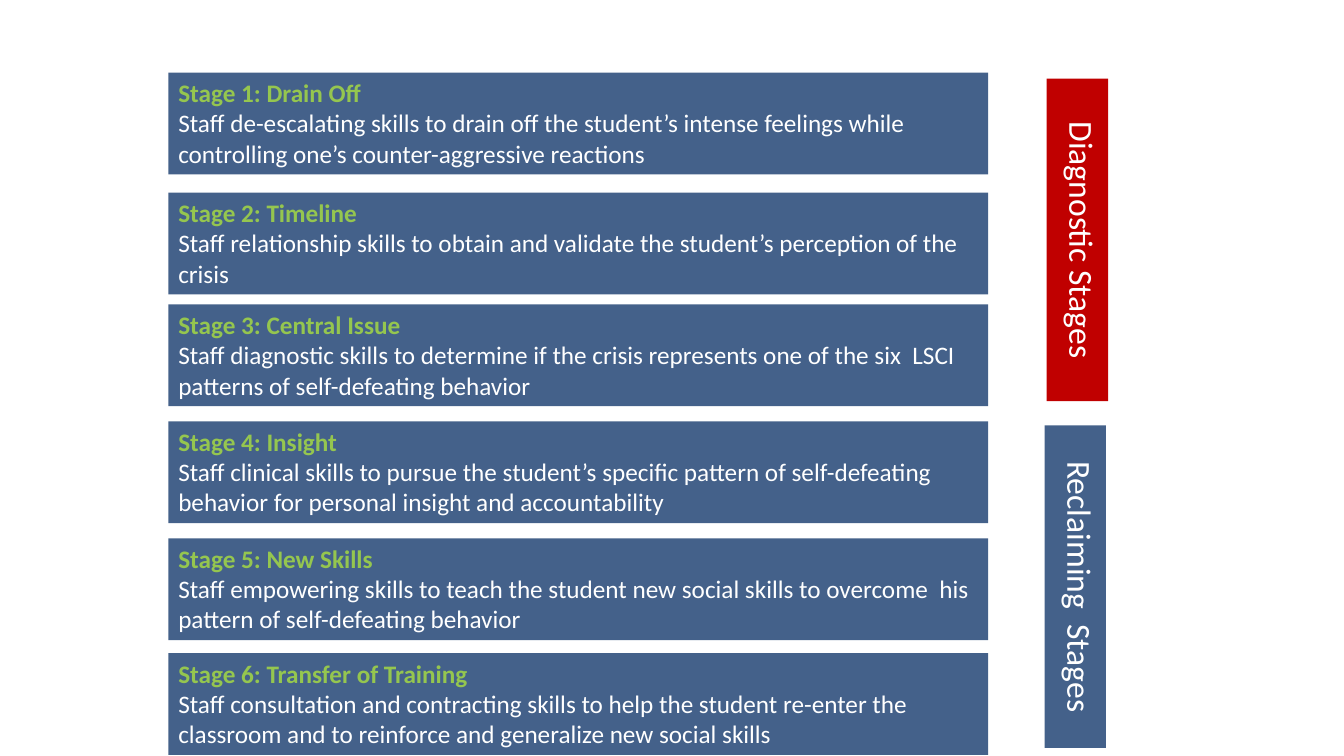
from pptx import Presentation
from pptx.dml.color import RGBColor
from pptx.enum.text import MSO_AUTO_SIZE as AutoSize, MSO_ANCHOR as Anchor, PP_ALIGN as Align
from pptx.util import Inches, Pt

BLUE, RED, GREEN, WHITE = "44618A", "C00000", "95C64F", "FFFFFF"

STAGES = [
    (0.72, "Drain Off", "Staff de-escalating skills to drain off the student’s intense "
     "feelings while controlling one’s counter-aggressive reactions"),
    (1.91, "Timeline", "Staff relationship skills to obtain and validate the student’s "
     "perception of the crisis"),
    (3.02, "Central Issue", "Staff diagnostic skills to determine if the crisis represents "
     "one of the six  LSCI patterns of self-defeating behavior"),
    (4.18, "Insight", "Staff clinical skills to pursue the student’s specific pattern of "
     "self-defeating behavior for personal insight and accountability"),
    (5.34, "New Skills", "Staff empowering skills to teach the student new social skills to "
     "overcome  his pattern of self-defeating behavior"),
    (6.48, "Transfer of Training", "Staff consultation and contracting skills to help the "
     "student re-enter the classroom and to reinforce and generalize new social skills"),
]

PHASES = [
    (10.38, 0.78, "Diagnostic Stages", RED),
    (10.36, 4.22, "Reclaiming  Stages", BLUE),
]


def color(value):
    return RGBColor.from_string(value)


class StageSlide:
    font = "Calibri"

    def __init__(self, deck):
        self.slide = deck.slides.add_slide(deck.slide_layouts[6])

    def box(self, left, top, width, height, fill):
        """Add a filled text box and return its text frame."""
        panel = self.slide.shapes.add_textbox(*map(Inches, (left, top, width, height)))
        panel.fill.solid()
        panel.fill.fore_color.rgb = color(fill)
        frame = panel.text_frame
        settings = {"word_wrap": True, "auto_size": AutoSize.SHAPE_TO_FIT_TEXT,
                    "vertical_anchor": Anchor.TOP}
        for name, value in settings.items():
            setattr(frame, name, value)
        return frame

    def add_text(self, paragraph, text, size, ink, bold=False):
        run = paragraph.add_run()
        run.text = text
        style = {"name": self.font, "size": Pt(size), "bold": bold}
        for name, value in style.items():
            setattr(run.font, name, value)
        run.font.color.rgb = color(ink)

    def stage(self, top, heading, skills):
        frame = self.box(1.67, top, 8.13, 1.01, BLUE)
        self.add_text(frame.paragraphs[0], heading, 18, GREEN, bold=True)
        self.add_text(frame.add_paragraph(), skills, 18, WHITE)

    def phase(self, left, top, label, fill):
        frame = self.box(left, top, 0.61, 3.2, fill)
        # Turn the label to read downwards
        frame._txBody.bodyPr.set("vert", "vert")
        frame.paragraphs[0].alignment = Align.CENTER
        self.add_text(frame.paragraphs[0], label, 24, WHITE)


def main():
    deck = Presentation()
    deck.slide_width, deck.slide_height = Inches(13.33), Inches(7.5)
    page = StageSlide(deck)

    # Six stages
    for number, (top, title, skills) in enumerate(STAGES, 1):
        page.stage(top, f"Stage {number}: {title}", skills)

    # Vertical phase labels
    for phase in PHASES:
        page.phase(*phase)

    deck.save("out.pptx")


if __name__ == "__main__":
    main()
